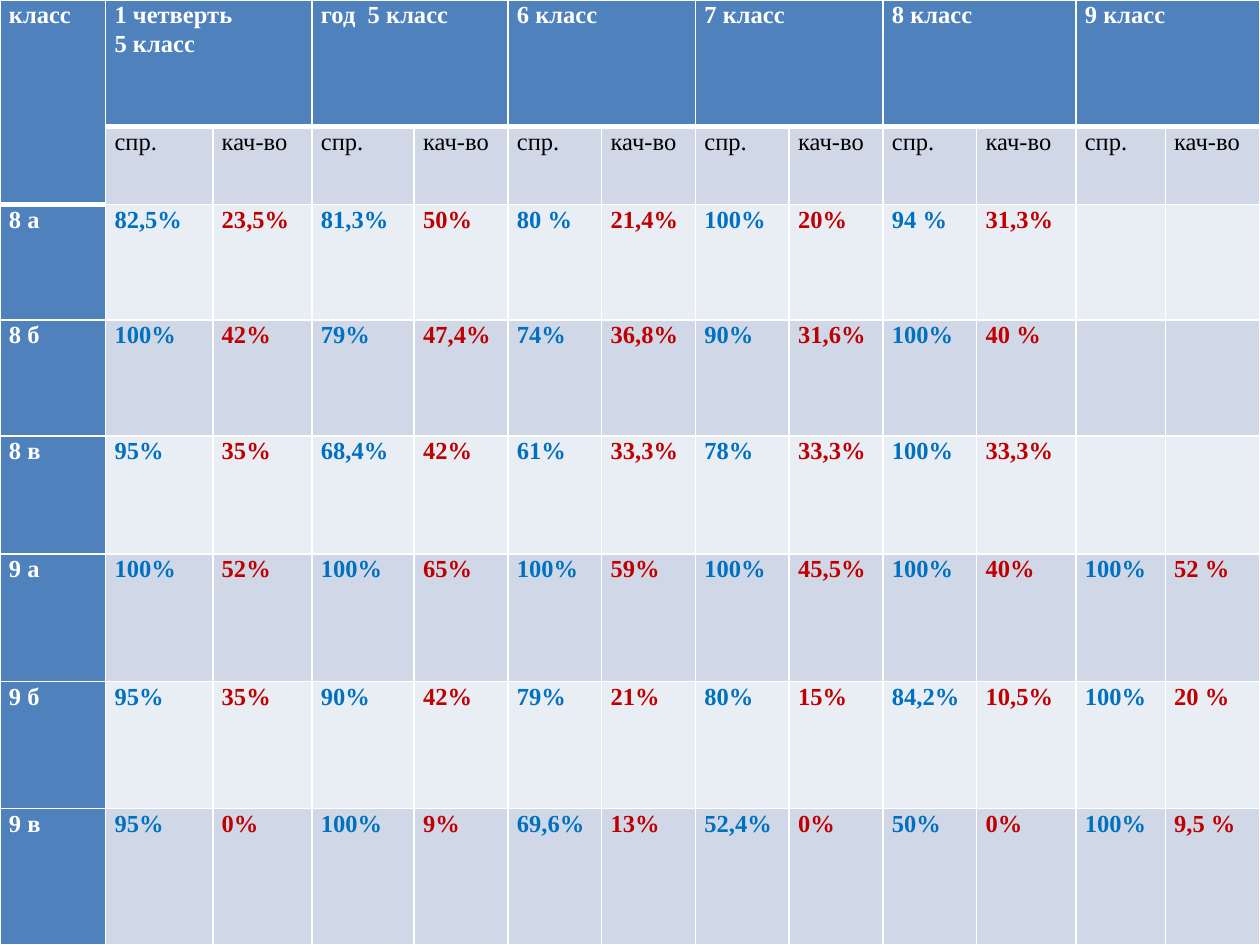
"""Build a slide with the attainment and quality table of classes 8 and 9."""
from dataclasses import dataclass

from lxml.etree import SubElement
from pptx import Presentation
from pptx.dml.color import RGBColor
from pptx.oxml.ns import qn
from pptx.util import Cm, Pt


@dataclass(frozen=True)
class Theme:
    font: str = "Times New Roman"
    size: int = 14
    line_spacing: float = 1.07
    inset: float = 0.18
    border: str = "FFFFFF"
    thin: int = 1
    thick: int = 3
    header_fill: str = "4F81BD"
    dark_band: str = "D0D8E8"
    light_band: str = "E9EDF4"
    header_text: str = "FFFFFF"
    label_text: str = "000000"
    attainment: str = "0070C0"
    quality: str = "C00000"


class SlideBuilder:
    def __init__(self, slide, theme):
        self.slide = slide
        self.theme = theme

    def table(self, widths, heights):
        frame = self.slide.shapes.add_table(
            len(heights), len(widths), 0, 0, Cm(sum(widths)), Cm(sum(heights)))
        grid = frame.table
        grid.first_row = grid.horz_banding = False
        for column, width in zip(grid.columns, widths):
            column.width = Cm(width)
        for row, height in zip(grid.rows, heights):
            row.height = Cm(height)
        return grid

    def borders(self, cell, top, bottom):
        properties = cell._tc.get_or_add_tcPr()
        thin = self.theme.thin
        for side, points in (("L", thin), ("R", thin), ("T", top), ("B", bottom)):
            line = SubElement(properties, qn(f"a:ln{side}"), w=str(Pt(points)))
            SubElement(SubElement(line, qn("a:solidFill")), qn("a:srgbClr"),
                       val=self.theme.border)

    def cell(self, cell, text, color, fill, bold=True):
        theme = self.theme
        cell.margin_left = cell.margin_right = Cm(theme.inset)
        cell.margin_top = cell.margin_bottom = 0
        cell.fill.solid()
        cell.fill.fore_color.rgb = RGBColor.from_string(fill)
        cell.text = text
        for paragraph in cell.text_frame.paragraphs:
            paragraph.line_spacing = theme.line_spacing
            font = paragraph.font
            font.name = theme.font
            font.size = Pt(theme.size)
            font.bold = bold
            font.color.rgb = RGBColor.from_string(color)


WIDTHS = [2.13, 2.16, 2.0, 2.06] + [1.89] * 6 + [2.0, 1.8, 1.91]
HEIGHTS = [2.55, 1.57, 2.33, 2.34, 2.38, 2.57, 2.56, 2.75]
PERIODS = ["1 четверть\n5 класс", "год  5 класс", "6 класс", "7 класс", "8 класс", "9 класс"]
MEASURES = ["спр.", "кач-во"]
RESULTS = {
    "8 а": ["82,5%", "23,5%", "81,3%", "50%", "80 %", "21,4%",
            "100%", "20%", "94 %", "31,3%", "", ""],
    "8 б": ["100%", "42%", "79%", "47,4%", "74%", "36,8%",
            "90%", "31,6%", "100%", "40 %", "", ""],
    "8 в": ["95%", "35%", "68,4%", "42%", "61%", "33,3%",
            "78%", "33,3%", "100%", "33,3%", "", ""],
    "9 а": ["100%", "52%", "100%", "65%", "100%", "59%",
            "100%", "45,5%", "100%", "40%", "100%", "52 %"],
    "9 б": ["95%", "35%", "90%", "42%", "79%", "21%",
            "80%", "15%", "84,2%", "10,5%", "100%", "20 %"],
    "9 в": ["95%", "0%", "100%", "9%", "69,6%", "13%",
            "52,4%", "0%", "50%", "0%", "100%", "9,5 %"],
}


def main():
    presentation = Presentation()
    presentation.slide_width, presentation.slide_height = Cm(25.4), Cm(19.05)
    theme = Theme()
    builder = SlideBuilder(presentation.slides.add_slide(presentation.slide_layouts[6]), theme)
    grid = builder.table(WIDTHS, HEIGHTS)

    for row in range(len(HEIGHTS)):
        for column in range(len(WIDTHS)):
            last_header = 0 if column else 1
            builder.borders(
                grid.cell(row, column),
                top=theme.thick if row == last_header + 1 else theme.thin,
                bottom=theme.thick if row <= last_header else theme.thin)

    grid.cell(0, 0).merge(grid.cell(1, 0))
    builder.cell(grid.cell(0, 0), "класс", theme.header_text, theme.header_fill)
    for index, period in enumerate(PERIODS):
        first = 1 + 2 * index
        grid.cell(0, first).merge(grid.cell(0, first + 1))
        builder.cell(grid.cell(0, first), period, theme.header_text, theme.header_fill)
        for offset, measure in enumerate(MEASURES):
            builder.cell(grid.cell(1, first + offset), measure,
                         theme.label_text, theme.dark_band, bold=False)

    for row, (group, values) in enumerate(RESULTS.items(), start=2):
        builder.cell(grid.cell(row, 0), group, theme.header_text, theme.header_fill)
        band = theme.dark_band if row % 2 else theme.light_band
        for column, value in enumerate(values, start=1):
            color = theme.attainment if column % 2 else theme.quality
            builder.cell(grid.cell(row, column), value, color, band)

    presentation.save("out.pptx")


if __name__ == "__main__":
    main()
